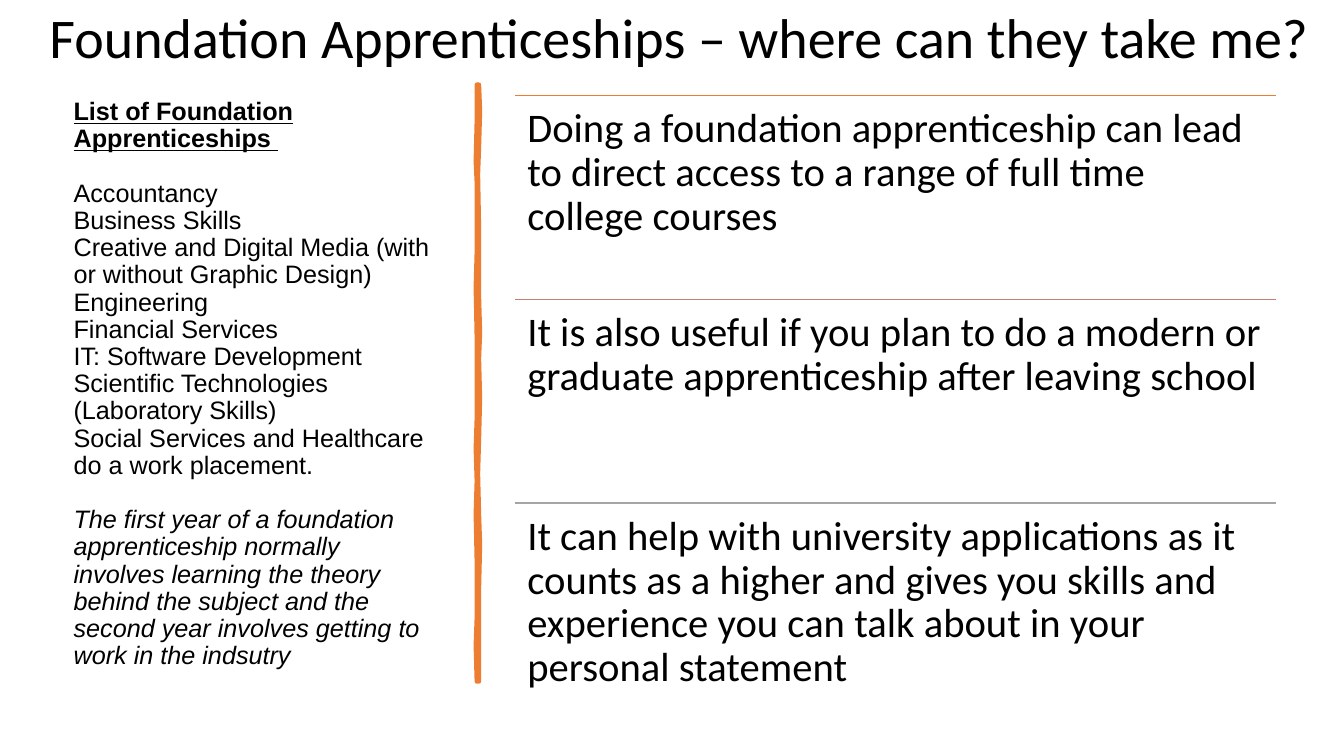
from lxml import etree
from pptx import Presentation
from pptx.dml.color import RGBColor
from pptx.enum.shapes import MSO_CONNECTOR
from pptx.enum.text import MSO_ANCHOR, MSO_AUTO_SIZE, PP_ALIGN
from pptx.oxml.ns import qn
from pptx.util import Inches, Pt

STRAIGHT = MSO_CONNECTOR.STRAIGHT
TOP = MSO_ANCHOR.TOP
NO_AUTOFIT = MSO_AUTO_SIZE.NONE
LEFT = PP_ALIGN.LEFT

COLORS = {"text": "000000", "orange": "ED7D31", "rose": "C48170", "gray": "A5A5A5"}

HEADING = "Foundation Apprenticeships – where can they take me?"
LIST_TITLE = "List of Foundation Apprenticeships "
SUBJECTS = [
    "Accountancy",
    "Business Skills",
    "Creative and Digital Media (with or without Graphic Design)",
    "Engineering",
    "Financial Services",
    "IT: Software Development",
    "Scientific Technologies (Laboratory Skills)",
    "Social Services and Healthcare",
    "do a work placement.",
]
LIST_NOTE = (
    "The first year of a foundation apprenticeship normally involves learning the theory "
    "behind the subject and the second year involves getting to work in the indsutry"
)
BENEFITS = [
    ("Doing a foundation apprenticeship can lead to direct access to a range of "
     "full time college courses", "orange"),
    ("It is also useful if you plan to do a modern or graduate apprenticeship "
     "after leaving school", "rose"),
    ("It can help with university applications as it counts as a higher and gives you "
     "skills and experience you can talk about in your personal statement", "gray"),
]

HEADING_BOX = (0.39, -0.03, 12.8, 0.77)
LIST_BOX = (0.63, 0.98, 3.74, 6.16)
BENEFIT_LEFT, BENEFIT_TOP, BENEFIT_WIDTH, BENEFIT_HEIGHT = 5.11, 0.95, 7.55, 2.02
BENEFIT_INSET = 0.12
BLANK_LINE = 19.4
DIVIDER_POINTS = [
    (4.75, 0.84), (4.76, 1.1), (4.75, 1.46), (4.74, 1.73), (4.75, 2.26), (4.75, 2.94),
    (4.76, 3.3), (4.75, 3.56), (4.76, 3.95), (4.75, 4.36), (4.74, 4.7), (4.75, 5.1),
    (4.76, 5.4), (4.75, 5.84), (4.75, 6.76), (4.73, 6.76), (4.72, 6.4), (4.73, 6.13),
    (4.73, 5.57), (4.72, 5.1), (4.73, 4.77), (4.72, 4.45), (4.73, 4.15), (4.73, 3.35),
    (4.72, 2.85), (4.73, 2.5), (4.73, 1.81), (4.72, 1.6), (4.73, 1.2), (4.73, 0.84),
]


def color(name):
    return RGBColor.from_string(COLORS[name])


def place(shape, box):
    for name, value in zip(("left", "top", "width", "height"), box):
        setattr(shape, name, Inches(value))


def format_frame(frame, horizontal, vertical):
    settings = {
        "word_wrap": True, "auto_size": NO_AUTOFIT, "vertical_anchor": TOP,
        "margin_left": Inches(horizontal), "margin_right": Inches(horizontal),
        "margin_top": Inches(vertical), "margin_bottom": Inches(vertical),
    }
    for name, value in settings.items():
        setattr(frame, name, value)


def write(paragraph, text, font, size, spacing=0.9, after=0, **styles):
    layout = {"alignment": LEFT, "line_spacing": spacing,
              "space_before": Pt(0), "space_after": Pt(after)}
    for name, value in layout.items():
        setattr(paragraph, name, value)
    run = paragraph.add_run()
    run.text = text
    for name, value in {"name": font, "size": Pt(size), **styles}.items():
        setattr(run.font, name, value)
    run.font.color.rgb = color("text")


def add_heading(slide):
    title = slide.shapes.title
    place(title, HEADING_BOX)
    format_frame(title.text_frame, 0.1, 0.05)
    write(title.text_frame.paragraphs[0], HEADING, "Calibri", 40, 1.0)


def add_list(slide):
    body = slide.placeholders[1]
    place(body, LIST_BOX)
    frame = body.text_frame
    format_frame(frame, 0.1, 0)
    entries = [(LIST_TITLE, BLANK_LINE, {"bold": True, "underline": True})]
    entries += [(subject, 0, {}) for subject in SUBJECTS[:-1]]
    entries += [(SUBJECTS[-1], BLANK_LINE, {}), (LIST_NOTE, 0, {"italic": True})]
    for index, (text, after, styles) in enumerate(entries):
        paragraph = frame.add_paragraph() if index else frame.paragraphs[0]
        write(paragraph, text, "Arial", 18, after=after, **styles)
        properties = paragraph._p.get_or_add_pPr()
        properties.set("marL", "0")
        properties.set("indent", "0")
        etree.SubElement(properties, qn("a:buNone"))


def add_divider(slide):
    points = [(Inches(x), Inches(y)) for x, y in DIVIDER_POINTS]
    builder = slide.shapes.build_freeform(*points[0])
    builder.add_line_segments(points[1:], close=True)
    divider = builder.convert_to_shape()
    divider.shadow.inherit = False
    divider.fill.solid()
    divider.fill.fore_color.rgb = color("orange")
    divider.line.color.rgb = color("orange")
    divider.line.width = Pt(3.25)
    etree.SubElement(divider.line._get_or_add_ln(), qn("a:round"))


def add_benefits(slide):
    for index, (text, line_color) in enumerate(BENEFITS):
        top = BENEFIT_TOP + index * BENEFIT_HEIGHT
        rule = slide.shapes.add_connector(
            STRAIGHT, Inches(BENEFIT_LEFT), Inches(top),
            Inches(BENEFIT_LEFT + BENEFIT_WIDTH), Inches(top))
        rule.line.color.rgb = color(line_color)
        rule.line.width = Pt(1)
        etree.SubElement(rule._element.spPr, qn("a:effectLst"))
        box = slide.shapes.add_textbox(
            Inches(BENEFIT_LEFT), Inches(top), Inches(BENEFIT_WIDTH), Inches(BENEFIT_HEIGHT))
        format_frame(box.text_frame, BENEFIT_INSET, BENEFIT_INSET)
        write(box.text_frame.paragraphs[0], text, "Calibri", 29)


def main():
    presentation = Presentation()
    presentation.slide_width = Inches(13.33)
    presentation.slide_height = Inches(7.5)
    slide = presentation.slides.add_slide(presentation.slide_layouts[1])
    add_list(slide)
    add_divider(slide)
    add_benefits(slide)
    add_heading(slide)
    presentation.save("out.pptx")


if __name__ == "__main__":
    main()
